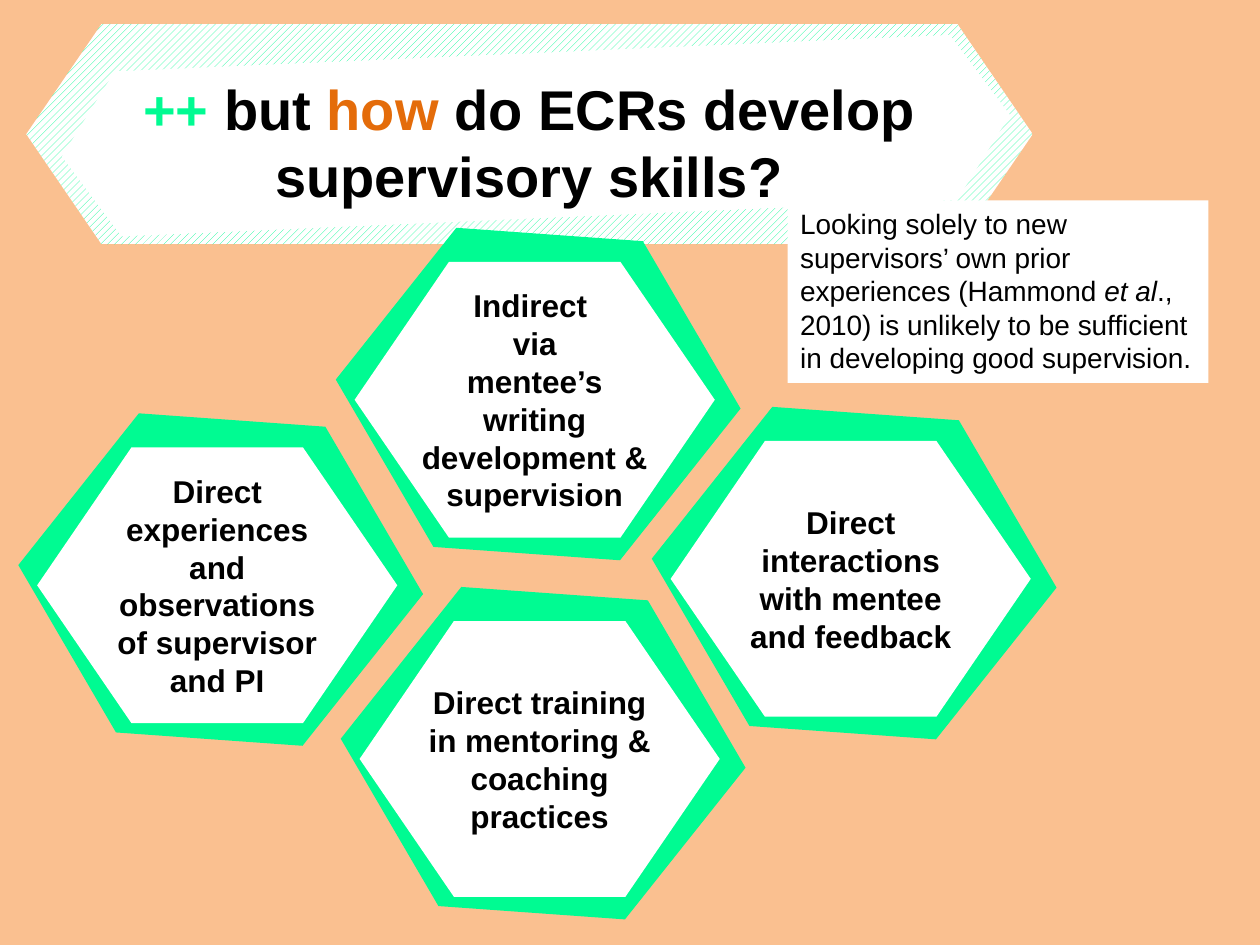
"""Build a slide on how early career researchers develop supervisory skills."""
from dataclasses import dataclass
from typing import Optional

import pptx
import pptx.dml.color
import pptx.enum.dml
import pptx.enum.shapes
import pptx.enum.text
import pptx.util

Cm = pptx.util.Cm
Align = pptx.enum.text.PP_ALIGN
Anchor = pptx.enum.text.MSO_ANCHOR
AutoSize = pptx.enum.text.MSO_AUTO_SIZE
Preset = pptx.enum.shapes.MSO_SHAPE


@dataclass(frozen=True)
class Theme:
    background: str = "FAC090"
    green: str = "00FB92"
    orange: str = "E46C0A"
    white: str = "FFFFFF"
    black: str = "000000"
    font: str = "Arial"
    title_size: int = 32
    cell_size: int = 18
    note_size: int = 16


@dataclass(frozen=True)
class Box:
    left: float
    top: float
    width: float
    height: float

    def lengths(self) -> tuple:
        return Cm(self.left), Cm(self.top), Cm(self.width), Cm(self.height)


@dataclass(frozen=True)
class Cell:
    left: float
    top: float
    text: str


@dataclass(frozen=True)
class Span:
    text: str
    color: str = "000000"
    italic: Optional[bool] = None


THEME = Theme()
HEXAGON_SLANT = 0.342
RIM_WIDTH, RIM_HEIGHT, RIM_TILT = 8.18, 6.45, 4.1
FACE_WIDTH, FACE_HEIGHT = 7.26, 5.56
FACE_SHIFT_X, FACE_SHIFT_Y = 0.39, 0.56

BANNER = Box(0.53, 0.48, 20.29, 4.45)
BANNER_FACE = Box(1.24, 1.07, 19.13, 3.33)
BANNER_TILT = -2.5
TITLE = Box(1.63, 1.37, 18.08, 3)
NOTE = Box(15.88, 4.04, 8.48, 3.68)

TITLE_SPANS = [
    Span("++", THEME.green),
    Span(" but "),
    Span("how", THEME.orange),
    Span(" do ECRs develop supervisory skills?"),
]
NOTE_SPANS = [
    Span("Looking solely to new supervisors’ own prior experiences (Hammond "),
    Span("et al", italic=True),
    Span("., 2010) is unlikely to be sufficient in developing good supervision."),
]
CELLS = [
    Cell(0.36, 8.46, "Direct experiences and observations of supervisor and PI"),
    Cell(6.86, 11.96, "Direct training in mentoring & coaching practices"),
    Cell(13.13, 8.33, "Direct interactions with mentee and feedback"),
    Cell(6.76, 4.72, "Indirect \nvia\nmentee’s writing development & supervision"),
]


def rgb(color: str) -> pptx.dml.color.RGBColor:
    return pptx.dml.color.RGBColor.from_string(color)


def add_panel(slide, preset, box: Box, color: str):
    shape = slide.shapes.add_shape(preset, *box.lengths())
    shape.shadow.inherit = False
    shape.fill.solid()
    shape.fill.fore_color.rgb = rgb(color)
    shape.line.fill.background()
    return shape


def add_hexagon(slide, box: Box, color: str, tilt: float = 0):
    shape = add_panel(slide, Preset.HEXAGON, box, color)
    shape.adjustments[0] = HEXAGON_SLANT
    shape.rotation = tilt
    return shape


def format_run(run, size: int, color: str, bold: bool) -> None:
    run.font.name = THEME.font
    run.font.size = pptx.util.Pt(size)
    run.font.bold = bold
    run.font.color.rgb = rgb(color)


def write_spans(text_frame, spans: list[Span], size: int, bold: bool, align) -> None:
    text_frame.word_wrap = True
    text_frame.vertical_anchor = Anchor.TOP
    paragraph = text_frame.paragraphs[0]
    paragraph.alignment = align
    for span in spans:
        run = paragraph.add_run()
        run.text = span.text
        format_run(run, size, span.color, bold)
        run.font.italic = span.italic


def add_title(slide) -> None:
    title = slide.shapes.title
    title.left, title.top, title.width, title.height = TITLE.lengths()
    banner = add_hexagon(slide, BANNER, THEME.white)
    banner.fill.patterned()
    banner.fill.pattern = pptx.enum.dml.MSO_PATTERN.WIDE_UPWARD_DIAGONAL
    banner.fill.fore_color.rgb = rgb(THEME.green)
    banner.fill.back_color.rgb = rgb(THEME.white)
    face = add_hexagon(slide, BANNER_FACE, THEME.white, BANNER_TILT)
    for shape in (banner, face):
        title.element.addprevious(shape.element)
    write_spans(title.text_frame, TITLE_SPANS, THEME.title_size, True, Align.CENTER)
    title.text_frame.auto_size = AutoSize.NONE


def add_cell(slide, cell: Cell) -> None:
    rim = Box(cell.left, cell.top, RIM_WIDTH, RIM_HEIGHT)
    add_hexagon(slide, rim, THEME.green, RIM_TILT)
    face = Box(cell.left + FACE_SHIFT_X, cell.top + FACE_SHIFT_Y, FACE_WIDTH, FACE_HEIGHT)
    text_frame = add_hexagon(slide, face, THEME.white).text_frame
    text_frame.word_wrap = True
    text_frame.vertical_anchor = Anchor.MIDDLE
    text_frame.margin_left = text_frame.margin_right = Cm(0.1)
    text_frame.margin_top = text_frame.margin_bottom = Cm(0.13)
    text_frame.text = cell.text
    for paragraph in text_frame.paragraphs:
        paragraph.alignment = Align.CENTER
        for run in paragraph.runs:
            format_run(run, THEME.cell_size, THEME.black, True)


def add_note(slide) -> None:
    text_frame = add_panel(slide, Preset.RECTANGLE, NOTE, THEME.white).text_frame
    write_spans(text_frame, NOTE_SPANS, THEME.note_size, False, Align.LEFT)
    text_frame.auto_size = AutoSize.SHAPE_TO_FIT_TEXT


def main() -> None:
    presentation = pptx.Presentation()
    presentation.slide_width, presentation.slide_height = Cm(25.4), Cm(19.05)
    slide = presentation.slides.add_slide(presentation.slide_layouts.get_by_name("Title Only"))
    slide.background.fill.solid()
    slide.background.fill.fore_color.rgb = rgb(THEME.background)
    add_title(slide)
    for cell in CELLS:
        add_cell(slide, cell)
    add_note(slide)
    presentation.save("out.pptx")


if __name__ == "__main__":
    main()
